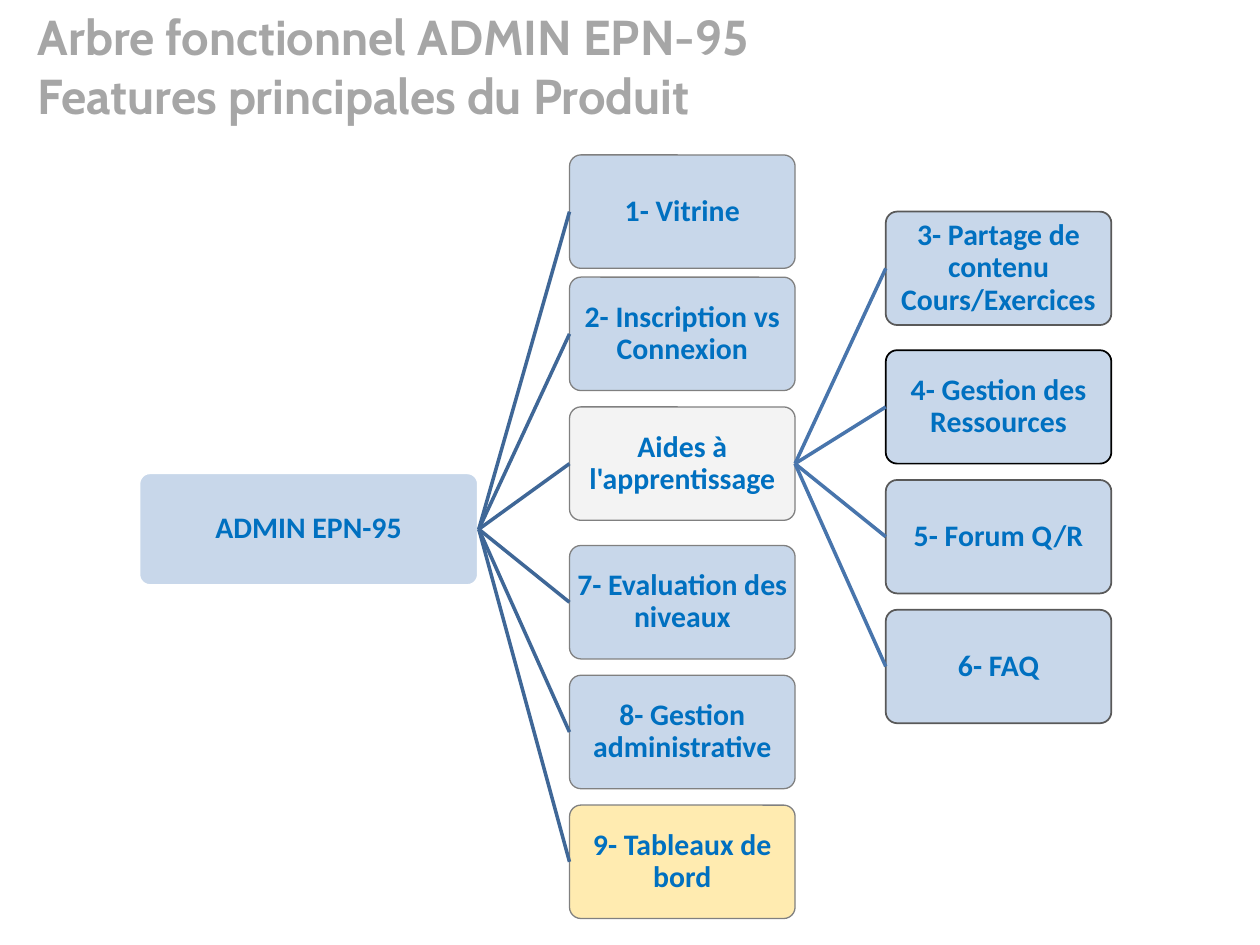
from lxml import etree
from pptx import Presentation
from pptx.dml.color import RGBColor
from pptx.enum import shapes, text
from pptx.oxml.ns import qn
from pptx.util import Inches, Pt

# Content: label, top, then any format that differs from its column
TITLE = "Arbre fonctionnel ADMIN EPN-95\vFeatures principales du Produit"
ROOT = "ADMIN EPN-95"
HUB = "Aides à l'apprentissage"
MAIN = [
    ("1- Vitrine", 1.23, {}),
    ("2- Inscription vs Connexion", 2.2, {}),
    (HUB, 3.23, {"fill": "D9D9D9"}),
    ("7- Evaluation des niveaux", 4.33, {}),
    ("8- Gestion administrative", 5.36, {}),
    ("9- Tableaux de bord", 6.39, {"fill": "FFC000"}),
]
HELP = [
    ("3- Partage de contenu Cours/Exercices", 1.68, {}),
    ("4- Gestion des Ressources", 2.78, {"line": "000000"}),
    ("5- Forum Q/R", 3.81, {}),
    ("6- FAQ", 4.84, {}),
]
BLUE, WIDE, HIGH = "4F81BD", 1.79, 0.9


def color(code):
    return RGBColor.from_string(code)


def style(font, **form):
    font.color.rgb = color(form.pop("ink"))
    for key, val in form.items():
        setattr(font, key, val)


def add_box(label, left, top, wide=WIDE, fill=BLUE, line="808080", width=0.75):
    box = slide.shapes.add_shape(
        shapes.MSO_SHAPE.ROUNDED_RECTANGLE,
        Inches(left), Inches(top), Inches(wide), Inches(HIGH))
    box.adjustments[0] = 0.1
    box.shadow.inherit = False
    box.fill.solid()
    box.fill.fore_color.rgb = color(fill)
    # Let the white page show through the fill
    tint = box.fill._xPr.find(qn("a:solidFill"))[0]
    etree.SubElement(tint, qn("a:alpha"), val="31000")
    box.line.color.rgb = color(line)
    box.line.width = Pt(width)
    frame = box.text_frame
    frame.word_wrap = True
    frame.vertical_anchor = text.MSO_ANCHOR.MIDDLE
    for side in ("left", "top", "right", "bottom"):
        setattr(frame, "margin_" + side, Inches(0.01))
    para = frame.paragraphs[0]
    para.alignment = text.PP_ALIGN.CENTER
    para.line_spacing = 0.9
    run = para.add_run()
    run.text = label
    style(run.font, name="Calibri", size=Pt(17), bold=True, ink="0070C0")
    return box


def join(start, end, ink):
    link = slide.shapes.add_connector(shapes.MSO_CONNECTOR.STRAIGHT, 0, 0, 0, 0)
    link.begin_connect(start, 3)
    link.end_connect(end, 1)
    link.line.color.rgb = color(ink)
    link.line.width = Pt(2)
    etree.SubElement(link._element.spPr, qn("a:effectLst"))


def branch(start, items, left, ink, **base):
    made = {}
    for label, top, extra in items:
        made[label] = add_box(label, left, top, **{**base, **extra})
        join(start, made[label], ink)
    return made


deck = Presentation()
deck.slide_width, deck.slide_height = Inches(10), Inches(7.5)
slide = deck.slides.add_slide(deck.slide_layouts[5])

# Title
title = slide.shapes.title
title.left, title.top, title.width, title.height = map(Inches, (0.2, 0, 9.53, 1.23))
title.text_frame.text = TITLE
title.text_frame.vertical_anchor = text.MSO_ANCHOR.TOP
head = title.text_frame.paragraphs[0]
head.alignment = text.PP_ALIGN.LEFT
for run in head.runs:
    style(run.font, name="Cabin", size=Pt(28), bold=True, ink="A6A6A6")

# Tree: root, main features, learning aids
root = add_box(ROOT, 1.1, 3.75, wide=2.7, line="FFFFFF", width=2)
main = branch(root, MAIN, 4.52, "3F6797")
branch(main[HUB], HELP, 7.03, "4875AC", line="595959", width=1)

deck.save("out.pptx")
